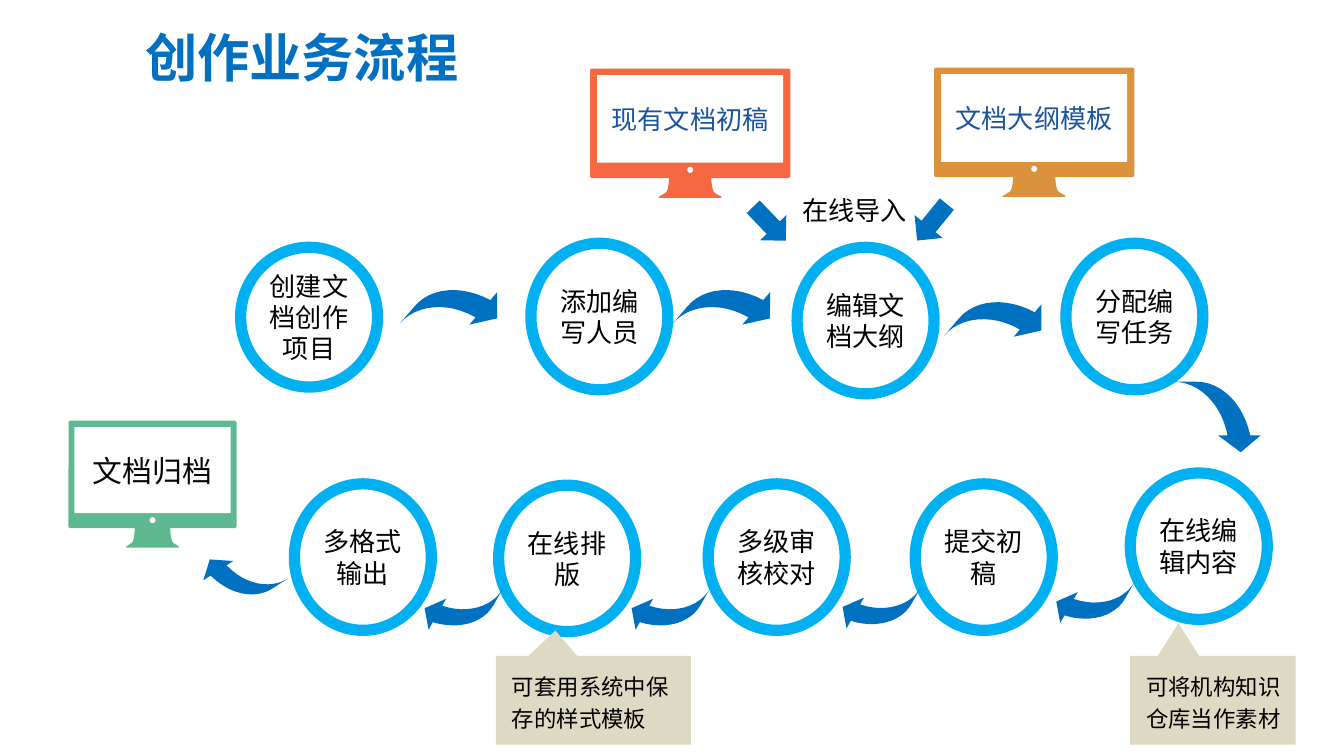
from pptx import Presentation
from pptx import util as u
from pptx.dml import color
from pptx.enum import shapes, text
from pptx.oxml import ns

COLORS = {
    "title": "0070C0", "arrow": "0070C0", "ring": "00B0F0", "white": "FFFFFF",
    "ink": "000000", "archive": "5FB990", "draft": "F66841",
    "template": "DC923C", "import": "1B539D", "archive_ink": "080808",
    "note": "DDD9C3",
}
FONT = "Noto Sans CJK SC"
PRESET = shapes.MSO_SHAPE
STEP_WIDTH = 73.4

# Outlines in fractions of their frame: a pair is a corner, a triple a Bezier curve.
BENT_ARROW = [
    (0, 0), (0.26, 0), ((0.55, 0), (0.8, 0.31), (0.88, 0.76)), (1, 0.76),
    (0.77, 1), (0.51, 0.76), (0.62, 0.76), ((0.55, 0.31), (0.29, 0), (0, 0)),
]
STAND = [
    (0.88, 0.73), ((0.85, 0.67), (0.83, 0.27), (0.83, 0)), (0.17, 0),
    ((0.17, 0.27), (0.15, 0.67), (0.12, 0.73)),
    ((0.07, 0.87), (-0.05, 1), (0.04, 1)), (0.96, 1),
    ((1.05, 1), (0.93, 0.87), (0.88, 0.73)),
]

# text, left, top, height
STEPS = [
    ("创建文档创作项目", 128.9, 132.5, 74.9),
    ("添加编写人员", 284.4, 130.3, 78.5),
    ("编辑文档大纲", 427, 132.5, 78.5),
    ("分配编写任务", 571, 130.3, 78.5),
    ("在线编辑内容", 605.5, 253.4, 78.5),
    ("提交初稿", 490.3, 259.2, 78.5),
    ("多级审核校对", 379.4, 259.2, 78.5),
    ("在线排版", 267.1, 259.9, 78.5),
    ("多格式输出", 157.7, 259.2, 78.5),
]
LARGE, SMALL = (46.8, 37.8), (38.9, 31.2)
# left, top, size, rotation
FLOW = [
    (220.3, 149, LARGE, 310.5), (366.5, 149, LARGE, 310.5),
    (511.9, 155.5, LARGE, 310.5), (628.6, 204.5, LARGE, 0),
    (565.2, 305.3, SMALL, 119.7), (450.7, 308.2, SMALL, 119.7),
    (337.7, 308.9, SMALL, 119.7), (226.8, 308.9, SMALL, 119.7),
    (110.2, 291.6, SMALL, 147.3),
]
IMPORT_ARROWS = [(486.7, 109.4, 129.2), (399.6, 110.2, 46.2)]
# text, frame, body colour, text colour, size, font
MONITORS = [
    ("文档归档", (36.7, 225.4, 90, 57.6), "archive", "archive_ink", 16, "Calibri"),
    ("现有文档初稿", (316.1, 36.7, 107.3, 58.7), "draft", "import", 14, FONT),
    ("文档大纲模板", (500.4, 36.2, 107.3, 58.7), "template", "import", 14, FONT),
]
# text, frame, pointer tip
NOTES = [
    ("可将机构知识仓库当作素材", (605.5, 351.4, 88.6, 47.5), (-0.208, -0.867)),
    ("可套用系统中保存的样式模板", (265.7, 351.4, 104.4, 47.5), (-0.195, -0.786)),
]


def points(values):
    return [u.Pt(value) for value in values]


def rgb(name):
    return color.RGBColor.from_string(COLORS[name])


def apply(target, formats):
    for name, value in formats.items():
        setattr(target, name, value)


def paint(shape, fill):
    shape.shadow.inherit = False
    shape.fill.solid()
    shape.fill.fore_color.rgb = rgb(fill)
    shape.line.fill.background()


def write(shape, words, size, ink, insets, align=text.PP_ALIGN.LEFT, font=FONT,
          spacing=1.0, bold=False, wrap=True, anchor=text.MSO_ANCHOR.MIDDLE):
    """Set the text; insets run left, top, right, bottom."""
    frame = shape.text_frame
    sides = ("margin_left", "margin_top", "margin_right", "margin_bottom")
    apply(frame, dict(zip(sides, points(insets))))
    apply(frame, {"word_wrap": wrap, "vertical_anchor": anchor})
    paragraph = frame.paragraphs[0]
    apply(paragraph, {"alignment": align, "line_spacing": spacing})
    run = paragraph.add_run()
    run.text = words
    apply(run.font, {"size": u.Pt(size), "bold": bold, "name": font})
    run.font.color.rgb = rgb(ink)
    east_asian = run.font._element.makeelement(ns.qn("a:ea"), {"typeface": FONT})
    run.font._element.append(east_asian)


def curve(start, first, second, end, pieces=12):
    """Points along a cubic Bezier curve, without its start."""
    for step in range(1, pieces + 1):
        t = step / pieces
        weights = ((1 - t) ** 3, 3 * t * (1 - t) ** 2, 3 * t * t * (1 - t), t ** 3)
        yield tuple(sum(w * p[axis] for w, p in zip(weights, (start, first, second, end)))
                    for axis in (0, 1))


def add_outline(owner, outline, frame, fill):
    left, top, width, height = points(frame)
    corners = [outline[0]]
    for part in outline[1:]:
        corners.extend(curve(corners[-1], *part) if len(part) == 3 else [part])
    places = [(round(left + x * width), round(top + y * height)) for x, y in corners]
    builder = owner.build_freeform(*places[0])
    builder.add_line_segments(places[1:], close=True)
    shape = builder.convert_to_shape()
    paint(shape, fill)
    return shape


def add_preset(owner, preset, frame, fill):
    shape = owner.add_shape(preset, *points(frame))
    paint(shape, fill)
    return shape


def add_title(slide):
    title = slide.shapes.title
    apply(title, dict(zip(("left", "top", "width", "height"),
                          points((70.6, 10.1, 184.3, 41)))))
    write(title, "创作业务流程", 28, "title", (7.2, 3.6, 7.2, 3.6), bold=True,
          wrap=False, anchor=text.MSO_ANCHOR.TOP)
    title.text_frame.auto_size = text.MSO_AUTO_SIZE.SHAPE_TO_FIT_TEXT


def add_step(owner, words, left, top, height):
    circle = add_preset(owner, PRESET.OVAL, (left, top, STEP_WIDTH, height), "white")
    circle.line.color.rgb = rgb("ring")
    circle.line.width = u.Pt(6)
    write(circle, words, 14, "ink", (0, 3.6, 0, 3.6), text.PP_ALIGN.CENTER)


def add_monitor(slide, words, frame, body_color, ink, size, font):
    left, top, width, height = frame
    parts = slide.shapes.add_group_shape().shapes
    body = add_preset(parts, PRESET.ROUNDED_RECTANGLE, frame, body_color)
    body.adjustments[0] = 0.02
    stand = (left + 0.34 * width, top + height, 0.32 * width, 0.18 * height)
    add_outline(parts, STAND, stand, body_color)
    dot = 3.2
    add_preset(parts, PRESET.OVAL,
               (left + (width - dot) / 2, top + 0.925 * height - dot / 2, dot, dot), "white")
    screen = add_preset(parts, PRESET.RECTANGLE,
                        (left + 0.035 * width, top + 0.06 * height,
                         0.93 * width, 0.8 * height), "white")
    write(screen, words, size, ink, (0, 3.6, 0, 3.6), text.PP_ALIGN.CENTER, font)


def add_note(owner, words, frame, tip):
    note = add_preset(owner, PRESET.RECTANGULAR_CALLOUT, frame, "note")
    for index, value in enumerate(tip):
        note.adjustments[index] = value
    write(note, words, 12, "ink", (8.6, 0, 2.9, 0), spacing=1.2)


def main():
    deck = Presentation()
    apply(deck, {"slide_width": u.Pt(720), "slide_height": u.Pt(405)})
    slide = deck.slides.add_slide(deck.slide_layouts[5])
    owner = slide.shapes
    add_title(slide)
    for step in STEPS:
        add_step(owner, *step)
    for left, top, size, rotation in FLOW:
        add_outline(owner, BENT_ARROW, (left, top, *size), "arrow").rotation = rotation
    for left, top, rotation in IMPORT_ARROWS:
        add_preset(owner, PRESET.RIGHT_ARROW, (left, top, 25.2, 19.4), "arrow").rotation = rotation
    import_label = owner.add_textbox(*points((422.6, 100.8, 71.3, 24.5)))
    write(import_label, "在线导入", 14, "ink", (7.2, 3.6, 7.2, 3.6), wrap=False,
          anchor=text.MSO_ANCHOR.TOP)
    for monitor in MONITORS:
        add_monitor(slide, *monitor)
    for note in NOTES:
        add_note(owner, *note)
    deck.save("out.pptx")


if __name__ == "__main__":
    main()
